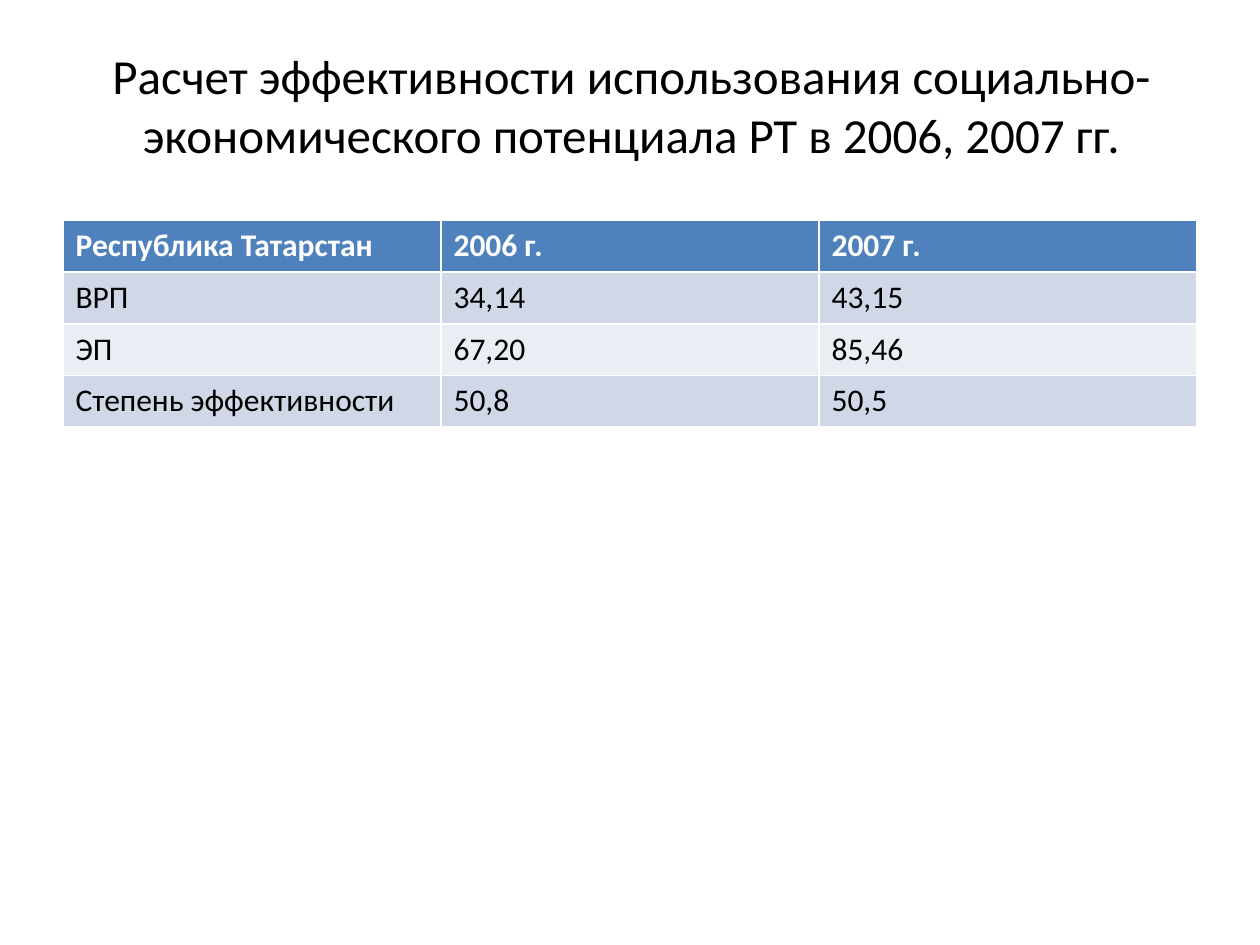
from pptx import Presentation
from pptx.dml.color import RGBColor
from pptx.enum.text import MSO_ANCHOR, PP_ALIGN
from pptx.util import Inches, Pt

TITLE = ("Расчет эффективности использования социально-"
         "экономического\u00a0потенциала РТ в 2006, 2007 гг.\v")
ROWS = [
    ("Республика Татарстан", "2006 г.", "2007 г."),
    ("ВРП", "34,14", "43,15"),
    ("ЭП", "67,20", "85,46"),
    ("Степень эффективности", "50,8", "50,5"),
]
FONT = "Calibri"
BLACK = RGBColor(0x00, 0x00, 0x00)
WHITE = RGBColor(0xFF, 0xFF, 0xFF)
HEADER = RGBColor(0x4F, 0x81, 0xBD)
BANDS = [RGBColor(0xE9, 0xED, 0xF4), RGBColor(0xD0, 0xD8, 0xE8)]
COL_W, ROW_H = 3, 0.41


def set_font(p, size, color, bold=False):
    p.font.name = FONT
    p.font.size = Pt(size)
    p.font.bold = bold
    p.font.color.rgb = color


def add_title(slide):
    sp = slide.shapes.title
    sp.left, sp.top = Inches(0.51), Inches(0.44)
    sp.width, sp.height = Inches(9), Inches(1.25)
    tf = sp.text_frame
    tf.word_wrap = True
    tf.vertical_anchor = MSO_ANCHOR.MIDDLE
    p = tf.paragraphs[0]
    p.text = TITLE
    p.alignment = PP_ALIGN.CENTER
    set_font(p, 28, BLACK)


def add_results_table(slide):
    n_rows, n_cols = len(ROWS), len(ROWS[0])
    table = slide.shapes.add_table(
        n_rows, n_cols, Inches(0.5), Inches(1.75),
        Inches(COL_W * n_cols), Inches(ROW_H * n_rows)).table
    for col in table.columns:
        col.width = Inches(COL_W)
    for i, values in enumerate(ROWS):
        table.rows[i].height = Inches(ROW_H)
        is_header = i == 0
        for j, value in enumerate(values):
            cell = table.cell(i, j)
            cell.fill.solid()
            cell.fill.fore_color.rgb = HEADER if is_header else BANDS[i % 2]
            cell.text = value
            set_font(cell.text_frame.paragraphs[0], 18,
                     WHITE if is_header else BLACK, is_header)


def main():
    prs = Presentation()
    prs.slide_width, prs.slide_height = Inches(10), Inches(7.5)
    slide = prs.slides.add_slide(prs.slide_layouts[5])
    add_title(slide)
    add_results_table(slide)
    prs.save("out.pptx")


if __name__ == "__main__":
    main()
